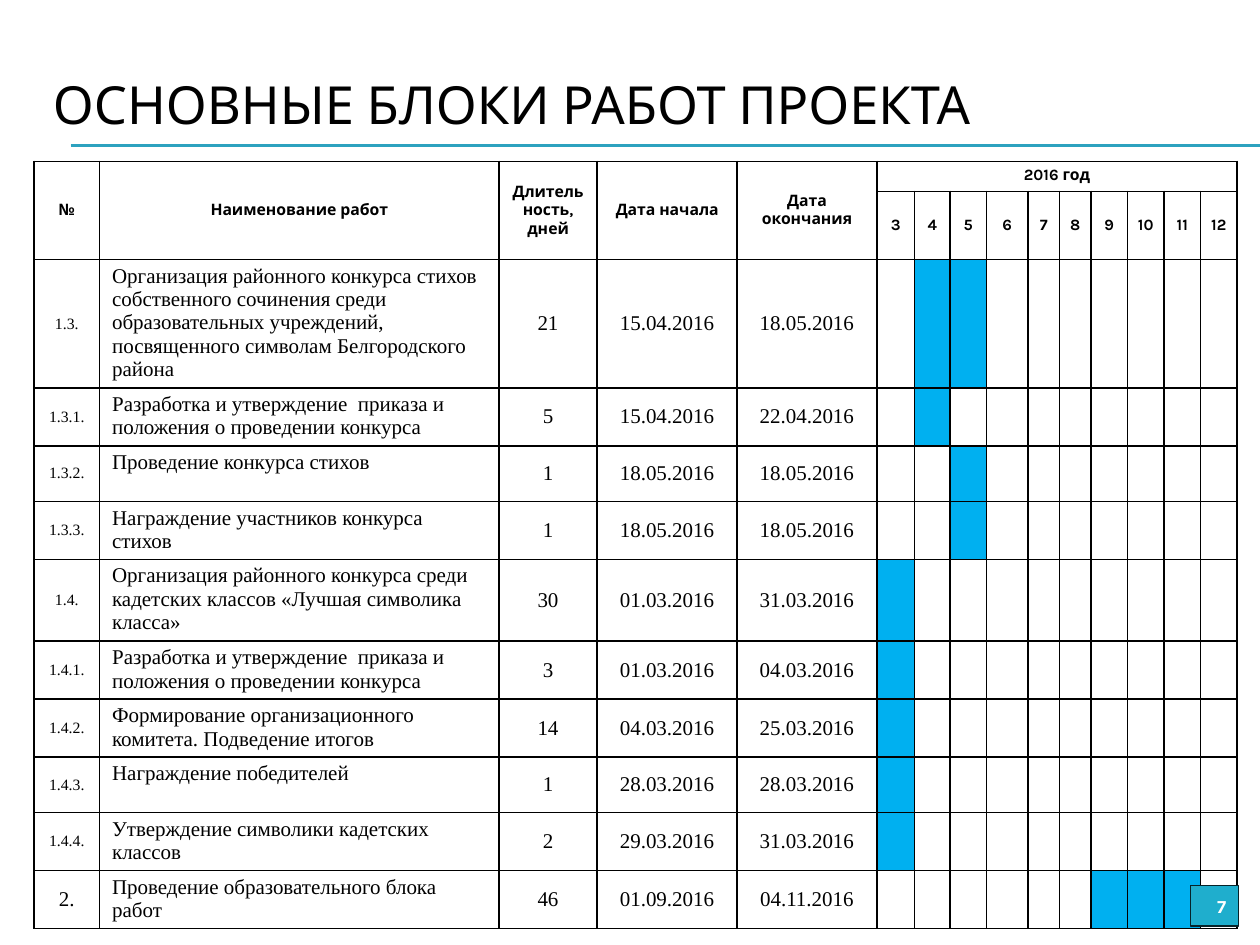
from dataclasses import dataclass

from lxml.etree import SubElement
from pptx import Presentation
from pptx.dml.color import RGBColor
from pptx.enum.shapes import MSO_CONNECTOR as Connector, MSO_SHAPE as Shape
from pptx.enum.text import MSO_ANCHOR as Anchor, PP_ALIGN as Align
from pptx.oxml.ns import qn
from pptx.util import Inches, Pt

COLORS = {
    "ink": "000000",
    "paper": "FFFFFF",
    "active": "00B0F0",
    "rule": "2DA2BF",
    "badge": "1FAECD",
    "badge_edge": "062329",
}
HEAD_FONT, BODY_FONT = "Karla", "Times New Roman"
MONTHS = range(3, 13)
HEADINGS = ["№", "Наименование работ", "Длительность, дней", "Дата начала", "Дата окончания"]
FIRST_MONTH_COL = len(HEADINGS)
COL_WIDTHS = [0.52, 3.17, 0.78, 1.11, 1.11, 0.3, 0.28, 0.29, 0.33, 0.25, 0.25] + [0.29] * 4
HEAD_HEIGHTS = [0.24, 0.54]


@dataclass
class Work:
    number: str
    name: str
    days: int
    start: str
    finish: str
    months: tuple[int, ...]
    height: float = 0.46
    number_size: float = 9


WORKS = [
    Work("1.3.", "Организация районного конкурса стихов собственного сочинения среди "
         "образовательных учреждений, посвященного символам Белгородского района",
         21, "15.04.2016", "18.05.2016", (4, 5), 1.02),
    Work("1.3.1.", "Разработка и утверждение  приказа и положения о проведении конкурса",
         5, "15.04.2016", "22.04.2016", (4,)),
    Work("1.3.2.", "Проведение конкурса стихов", 1, "18.05.2016", "18.05.2016", (5,), 0.44),
    Work("1.3.3.", "Награждение участников конкурса стихов",
         1, "18.05.2016", "18.05.2016", (5,)),
    Work("1.4.", "Организация районного конкурса среди кадетских классов "
         "«Лучшая символика класса»", 30, "01.03.2016", "31.03.2016", (3,), 0.65),
    Work("1.4.1.", "Разработка и утверждение  приказа и положения о проведении конкурса",
         3, "01.03.2016", "04.03.2016", (3,)),
    Work("1.4.2.", "Формирование организационного комитета. Подведение итогов",
         14, "04.03.2016", "25.03.2016", (3,)),
    Work("1.4.3.", "Награждение победителей", 1, "28.03.2016", "28.03.2016", (3,), 0.44),
    Work("1.4.4.", "Утверждение символики кадетских классов",
         2, "29.03.2016", "31.03.2016", (3,)),
    Work("2.", "Проведение образовательного блока работ",
         46, "01.09.2016", "04.11.2016", (9, 10, 11), number_size=12),
]


def rgb(name: str) -> RGBColor:
    return RGBColor.from_string(COLORS[name])


def write(frame, text: str, font: str, size: float, color: str = "ink",
          bold: bool = False, align=Align.CENTER) -> None:
    frame.text = text
    paragraph = frame.paragraphs[0]
    paragraph.alignment = align
    for run in paragraph.runs:
        run.font.name = font
        run.font.size = Pt(size)
        run.font.bold = bold
        run.font.color.rgb = rgb(color)


def style_cell(cell, fill: str = "paper") -> None:
    properties = cell._tc.get_or_add_tcPr()
    for side in ("lnL", "lnR", "lnT", "lnB"):
        border = SubElement(properties, qn(f"a:{side}"), w=str(Pt(1)))
        border_fill = SubElement(border, qn("a:solidFill"))
        SubElement(border_fill, qn("a:srgbClr"), val=COLORS["ink"])
    cell.fill.solid()
    cell.fill.fore_color.rgb = rgb(fill)
    cell.vertical_anchor = Anchor.MIDDLE
    cell.margin_top = cell.margin_bottom = Inches(0.04)


def add_rule(slide, y: float) -> None:
    rule = slide.shapes.add_connector(
        Connector.STRAIGHT, Inches(0.56), Inches(y), Inches(10), Inches(y))
    rule.line.color.rgb = rgb("rule")
    rule.line.width = Pt(0.75)
    SubElement(rule._element.spPr, qn("a:effectLst"))


def add_title(slide, text: str) -> None:
    title = slide.shapes.title
    title.left, title.top = Inches(0.32), Inches(0.36)
    title.width, title.height = Inches(9.5), Inches(0.92)
    write(title.text_frame, text, HEAD_FONT, 30, align=Align.LEFT)
    title.text_frame.vertical_anchor = Anchor.MIDDLE


def fill_header(table) -> None:
    for column, heading in enumerate(HEADINGS):
        cell = table.cell(0, column)
        cell.merge(table.cell(1, column))
        write(cell.text_frame, heading, HEAD_FONT, 9, bold=True)
    year = table.cell(0, FIRST_MONTH_COL)
    year.merge(table.cell(0, len(COL_WIDTHS) - 1))
    write(year.text_frame, "2016 год", HEAD_FONT, 9, bold=True)
    year.vertical_anchor = Anchor.TOP
    for column, month in enumerate(MONTHS, FIRST_MONTH_COL):
        cell = table.cell(1, column)
        cell.margin_left = cell.margin_right = Inches(0.04)
        write(cell.text_frame, str(month), HEAD_FONT, 9, bold=True)


def fill_work(table, row: int, work: Work) -> None:
    values = [work.number, work.name, str(work.days), work.start, work.finish]
    for column, value in enumerate(values):
        size = work.number_size if column == 0 else 12
        align = Align.LEFT if column == 1 else Align.CENTER
        write(table.cell(row, column).text_frame, value, BODY_FONT, size, align=align)
    table.cell(row, 1).vertical_anchor = Anchor.TOP


def add_schedule(slide) -> None:
    heights = HEAD_HEIGHTS + [work.height for work in WORKS]
    table = slide.shapes.add_table(
        len(heights), len(COL_WIDTHS), Inches(0.27), Inches(1.28),
        Inches(sum(COL_WIDTHS)), Inches(sum(heights))).table
    table.first_row = table.horz_banding = False
    for column, width in zip(table.columns, COL_WIDTHS):
        column.width = Inches(width)
    for row, height in zip(table.rows, heights):
        row.height = Inches(height)
    for row in range(len(heights)):
        work = WORKS[row - 2] if row >= 2 else None
        for column in range(len(COL_WIDTHS)):
            month = column - FIRST_MONTH_COL + MONTHS[0]
            active = work is not None and month in work.months
            style_cell(table.cell(row, column), "active" if active else "paper")
    fill_header(table)
    for row, work in enumerate(WORKS, len(HEAD_HEIGHTS)):
        fill_work(table, row, work)


def add_page_badge(slide, number: str) -> None:
    badge = slide.shapes.add_shape(
        Shape.RECTANGLE, Inches(9.45), Inches(7.03), Inches(0.38), Inches(0.32))
    badge.shadow.inherit = False
    badge.fill.solid()
    badge.fill.fore_color.rgb = rgb("badge")
    badge.line.color.rgb = rgb("badge_edge")
    badge.line.width = Pt(0.75)
    write(badge.text_frame, number, HEAD_FONT, 10.5, "paper", True, Align.RIGHT)


def main() -> None:
    deck = Presentation()
    deck.slide_width, deck.slide_height = Inches(10), Inches(7.5)
    slide = deck.slides.add_slide(deck.slide_layouts[5])
    for y in (1.15, 1.16):
        add_rule(slide, y)
    add_title(slide, "ОСНОВНЫЕ БЛОКИ РАБОТ ПРОЕКТА")
    add_schedule(slide)
    add_page_badge(slide, "7")
    deck.save("out.pptx")


if __name__ == "__main__":
    main()
